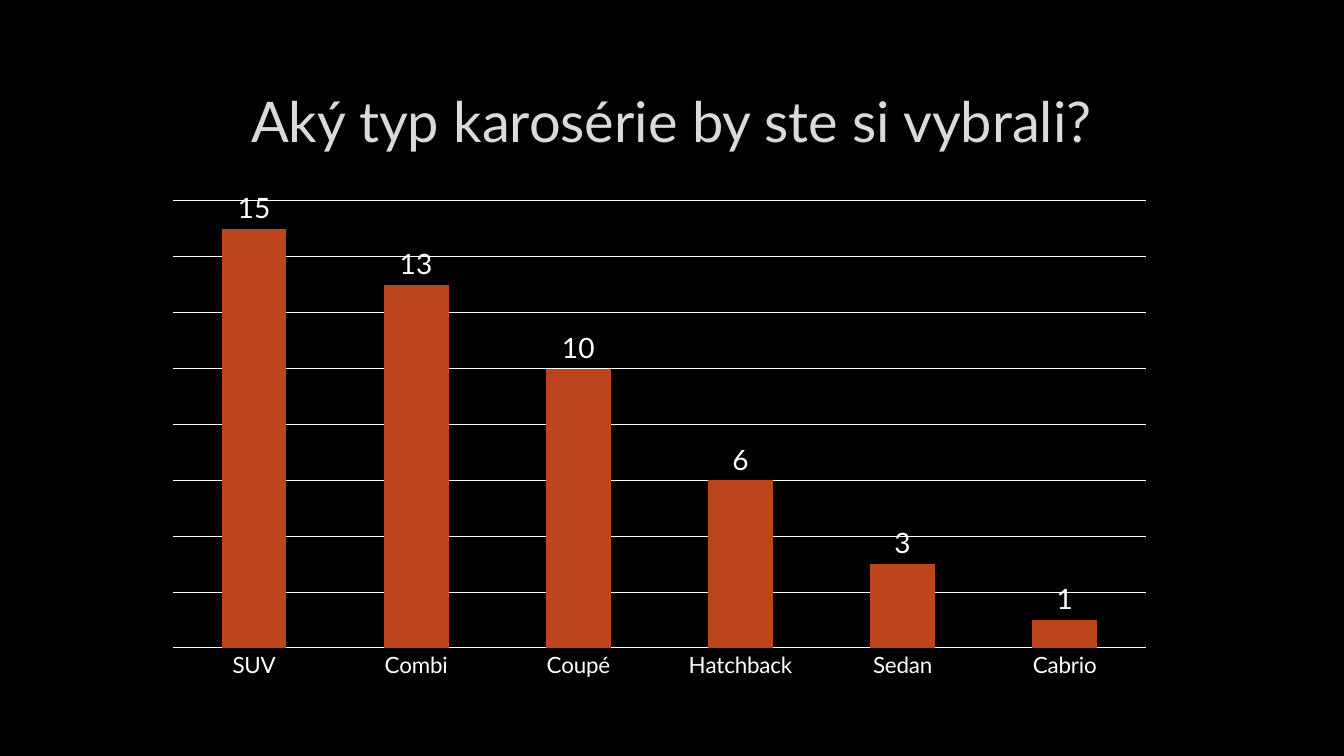
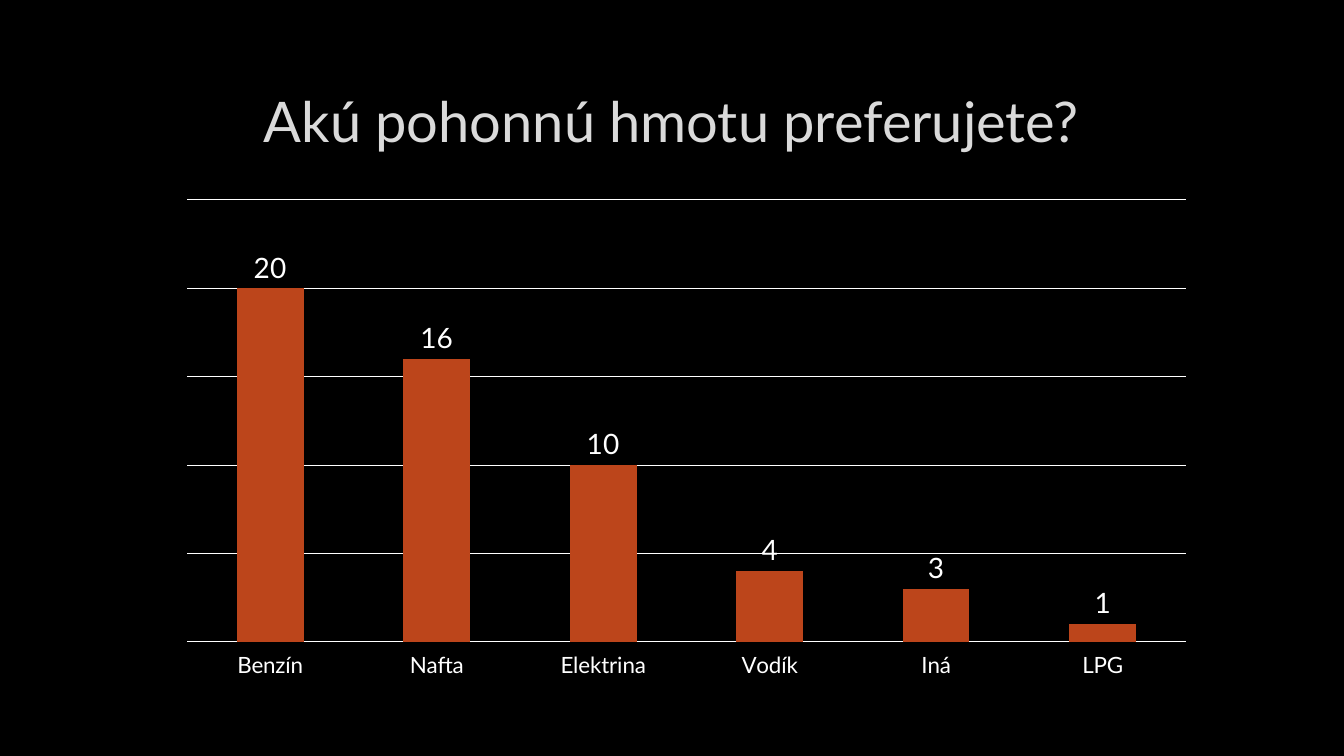
"""Build two survey slides, each with a title and a column chart."""
import dataclasses

import lxml.etree
import pptx
import pptx.chart.data
import pptx.dml.color
import pptx.enum.chart
import pptx.enum.text
import pptx.oxml.ns
import pptx.util

SURVEYS = [
    {
        "title": "Aký typ karosérie by ste si vybrali?",
        "answers": [("SUV", 15), ("Combi", 13), ("Coupé", 10),
                    ("Hatchback", 6), ("Sedan", 3), ("Cabrio", 1)],
        "chart": (152, 190, 1014, 498),
        "plot": (173, 201, 973, 447),
        "scale": (16, 2),
        "tick": pptx.enum.chart.XL_TICK_MARK.NONE,
    },
    {
        "title": "Akú pohonnú hmotu preferujete?",
        "answers": [("Benzín", 20), ("Nafta", 16), ("Elektrina", 10),
                    ("Vodík", 4), ("Iná", 3), ("LPG", 1)],
        "chart": (166, 190, 1041, 498),
        "plot": (187, 200, 999, 442),
        "scale": (25, 5),
        "tick": pptx.enum.chart.XL_TICK_MARK.OUTSIDE,
    },
]

SLIDE = (1344, 756)
TITLE = (101, 67, 1141, 107)
EMU_PER_PX = 12192000 / SLIDE[0]


@dataclasses.dataclass(frozen=True)
class Theme:
    font: str = "Lato"
    background: str = "000000"
    title: str = "DADADA"
    outline: str = "404040"
    text: str = "FFFFFF"
    bar: str = "BC451B"
    title_size: int = 40
    label_size: int = 20
    category_size: int = 16
    chart_size: int = 10
    line_width: float = 0.75


THEME = Theme()


def px(*lengths):
    return [pptx.util.Emu(round(n * EMU_PER_PX)) for n in lengths]


def paint(fill, color):
    fill.solid()
    fill.fore_color.rgb = pptx.dml.color.RGBColor.from_string(color)


def style_font(font, size, color):
    font.name = THEME.font
    font.size = pptx.util.Pt(size)
    paint(font.fill, color)


def child(parent, tag, **attributes):
    return lxml.etree.SubElement(parent, pptx.oxml.ns.qn(tag), **attributes)


def outline_text(r):
    rPr = r.font._element
    ln = child(rPr, "a:ln", w=str(pptx.util.Pt(THEME.line_width)))
    color = child(child(ln, "a:solidFill"), "a:srgbClr", val=THEME.outline)
    child(color, "a:alpha", val="10000")
    rPr.insert(0, ln)


def add_title(s, text):
    sp = s.shapes.title
    sp.left, sp.top, sp.width, sp.height = px(*TITLE)
    tf = sp.text_frame
    tf.vertical_anchor = pptx.enum.text.MSO_ANCHOR.MIDDLE
    p = tf.paragraphs[0]
    p.alignment = pptx.enum.text.PP_ALIGN.CENTER
    r = p.add_run()
    r.text = text
    style_font(r.font, THEME.title_size, THEME.title)
    outline_text(r)


def place_plot(chart, frame, plot):
    area = chart._chartSpace.chart.plotArea
    for old in area.findall(pptx.oxml.ns.qn("c:layout")):
        area.remove(old)
    layout = child(area, "c:layout")
    area.insert(0, layout)
    manual = child(layout, "c:manualLayout")
    left, top, width, height = frame
    values = {
        "layoutTarget": "inner", "xMode": "edge", "yMode": "edge",
        "x": (plot[0] - left) / width, "y": (plot[1] - top) / height,
        "w": plot[2] / width, "h": plot[3] / height,
    }
    for name, value in values.items():
        child(manual, f"c:{name}", val=str(value))


def add_column_chart(s, survey):
    data = pptx.chart.data.CategoryChartData()
    data.categories, values = zip(*survey["answers"])
    data.add_series("Series 1", values)
    kind = pptx.enum.chart.XL_CHART_TYPE.COLUMN_CLUSTERED
    chart = s.shapes.add_chart(kind, *px(*survey["chart"]), data).chart
    chart.has_title = chart.has_legend = False
    style_font(chart.font, THEME.chart_size, THEME.text)

    categories = chart.category_axis
    categories.major_tick_mark = survey["tick"]
    categories.format.line.fill.background()
    style_font(categories.tick_labels.font, THEME.category_size, THEME.text)

    axis = chart.value_axis
    axis.visible = False
    axis.minimum_scale = 0
    axis.maximum_scale, axis.major_unit = survey["scale"]
    grid = axis.major_gridlines.format.line
    grid.width = pptx.util.Pt(THEME.line_width)
    paint(grid.fill, THEME.text)

    columns = chart.plots[0]
    columns.gap_width = 150
    columns.vary_by_categories = False
    series = columns.series[0]
    paint(series.format.fill, THEME.bar)
    labels = series.data_labels
    labels.show_value = True
    labels.position = pptx.enum.chart.XL_LABEL_POSITION.OUTSIDE_END
    style_font(labels.font, THEME.label_size, THEME.text)
    place_plot(chart, survey["chart"], survey["plot"])


def main():
    prs = pptx.Presentation()
    prs.slide_width, prs.slide_height = px(*SLIDE)
    paint(prs.slide_master.background.fill, THEME.background)
    title_only = prs.slide_layouts.get_by_name("Title Only")
    for survey in SURVEYS:
        s = prs.slides.add_slide(title_only)
        add_title(s, survey["title"])
        add_column_chart(s, survey)
    prs.save("out.pptx")


if __name__ == "__main__":
    main()
